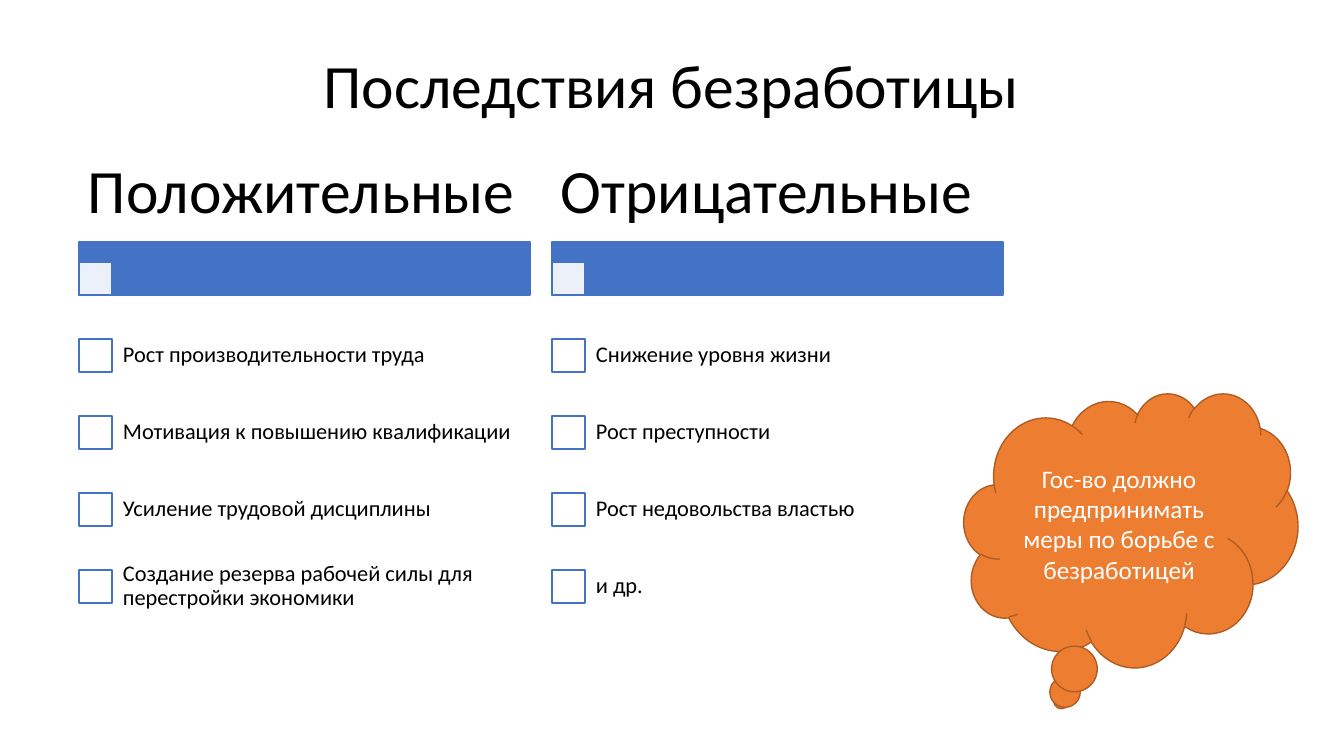
import pptx
import pptx.dml.color
import pptx.enum.shapes
import pptx.enum.text
import pptx.oxml.ns
import pptx.util
from lxml import etree

PX = 914400 / 100.8  # EMU in one px

BLACK = pptx.dml.color.RGBColor(0x00, 0x00, 0x00)
WHITE = pptx.dml.color.RGBColor(0xFF, 0xFF, 0xFF)
BLUE = pptx.dml.color.RGBColor(0x44, 0x72, 0xC4)
ORANGE = pptx.dml.color.RGBColor(0xED, 0x7D, 0x31)
BROWN = pptx.dml.color.RGBColor(0xAF, 0x5C, 0x24)

SHAPE = pptx.enum.shapes.MSO_SHAPE
LEFT = pptx.enum.text.PP_ALIGN.LEFT
CENTER = pptx.enum.text.PP_ALIGN.CENTER

COLUMN_LEFT, COLUMN_PITCH, COLUMN_WIDTH = 79, 473, 451
ITEM_TOP, ITEM_PITCH = 317, 77
BOX, LABEL_INDENT = 33, 32

COLUMNS = [
    ("Положительные", [
        "Рост производительности труда",
        "Мотивация к повышению квалификации",
        "Усиление трудовой дисциплины",
        "Создание резерва рабочей силы для перестройки экономики",
    ]),
    ("Отрицательные", [
        "Снижение уровня жизни",
        "Рост преступности",
        "Рост недовольства властью",
        "и др.",
    ]),
]


def px(*values):
    return [pptx.util.Emu(round(v * PX)) for v in values]


def set_text(sp, text, size, color=BLACK, align=LEFT, spacing=0.9, inset=(10, 5)):
    tf = sp.text_frame
    side, end = px(*inset)
    frame_format = {
        "word_wrap": True,
        "vertical_anchor": pptx.enum.text.MSO_ANCHOR.MIDDLE,
        "margin_left": side, "margin_right": side,
        "margin_top": end, "margin_bottom": end,
    }
    p = tf.paragraphs[0]
    r = p.add_run()
    r.text = text
    r.font.color.rgb = color
    formats = [
        (tf, frame_format),
        (p, {"alignment": align, "line_spacing": spacing}),
        (r.font, {"name": "Calibri", "size": pptx.util.Pt(size)}),
    ]
    for target, values in formats:
        for name, value in values.items():
            setattr(target, name, value)


def add_text(shapes, at, text, size, **options):
    set_text(shapes.add_textbox(*px(*at)), text, size, **options)


def add_filled(shapes, kind, at, fill, line, opacity=None):
    sp = shapes.add_shape(kind, *px(*at))
    sp.shadow.inherit = False
    sp.fill.solid()
    sp.fill.fore_color.rgb = fill
    sp.line.color.rgb = line
    sp.line.width = pptx.util.Pt(1)
    if opacity is not None:
        color = sp.fill._xPr.find(".//" + pptx.oxml.ns.qn("a:srgbClr"))
        alpha = etree.SubElement(color, pptx.oxml.ns.qn("a:alpha"))
        alpha.set("val", str(opacity * 1000))
    return sp


def add_column(shapes, left, heading, items):
    # Heading with its bar and corner box
    add_filled(shapes, SHAPE.RECTANGLE, (left, 242, COLUMN_WIDTH, 53), BLUE, BLUE)
    add_filled(shapes, SHAPE.RECTANGLE, (left, 262, BOX, BOX), WHITE, BLUE, opacity=90)
    add_text(shapes, (left, 146, COLUMN_WIDTH, 95), heading, 44, inset=(9, 6))

    # Check boxes with labels
    for i, item in enumerate(items):
        top = ITEM_TOP + i * ITEM_PITCH
        box_top = top + (ITEM_PITCH - BOX) // 2
        add_filled(shapes, SHAPE.RECTANGLE, (left, box_top, BOX, BOX), WHITE, BLUE)
        label_at = (left + LABEL_INDENT, top, COLUMN_WIDTH - LABEL_INDENT, ITEM_PITCH)
        add_text(shapes, label_at, item, 16, inset=(12, 12))


def main():
    prs = pptx.Presentation()
    prs.slide_width, prs.slide_height = px(1344, 756)
    s = prs.slides.add_slide(prs.slide_layouts[6])

    # Title
    add_text(s.shapes, (92, 40, 1159, 98), "Последствия безработицы", 44, align=CENTER)

    # Two lists of consequences
    lists = s.shapes.add_group_shape()
    for i, (heading, items) in enumerate(COLUMNS):
        add_column(lists.shapes, COLUMN_LEFT + i * COLUMN_PITCH, heading, items)

    # Thought cloud
    cloud = add_filled(s.shapes, SHAPE.CLOUD_CALLOUT, (964, 393, 334, 274), ORANGE, BROWN)
    set_text(cloud, "Гос-во должно предпринимать меры по борьбе с безработицей", 18,
             color=WHITE, align=CENTER, spacing=1.0)

    prs.save("out.pptx")


if __name__ == "__main__":
    main()
